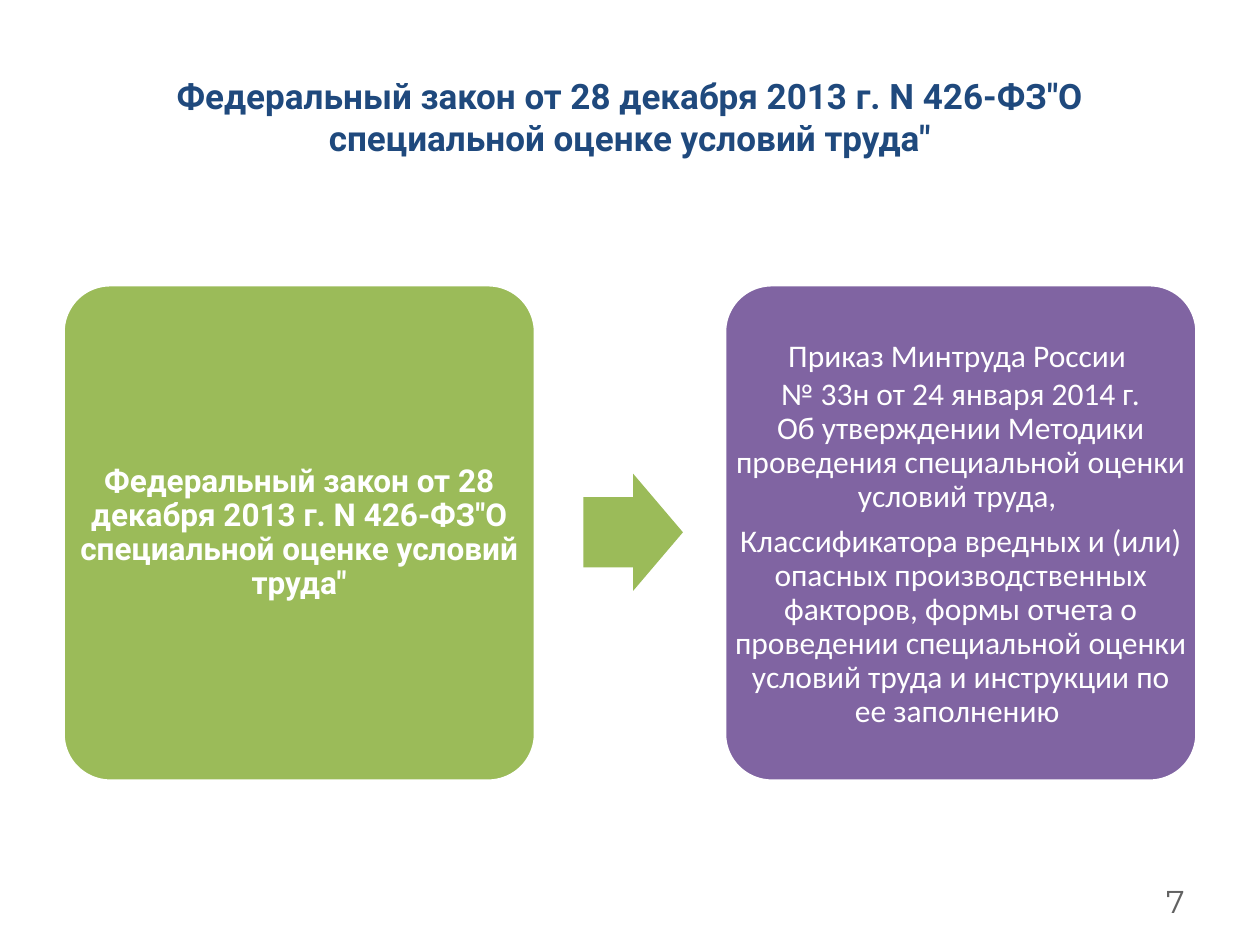
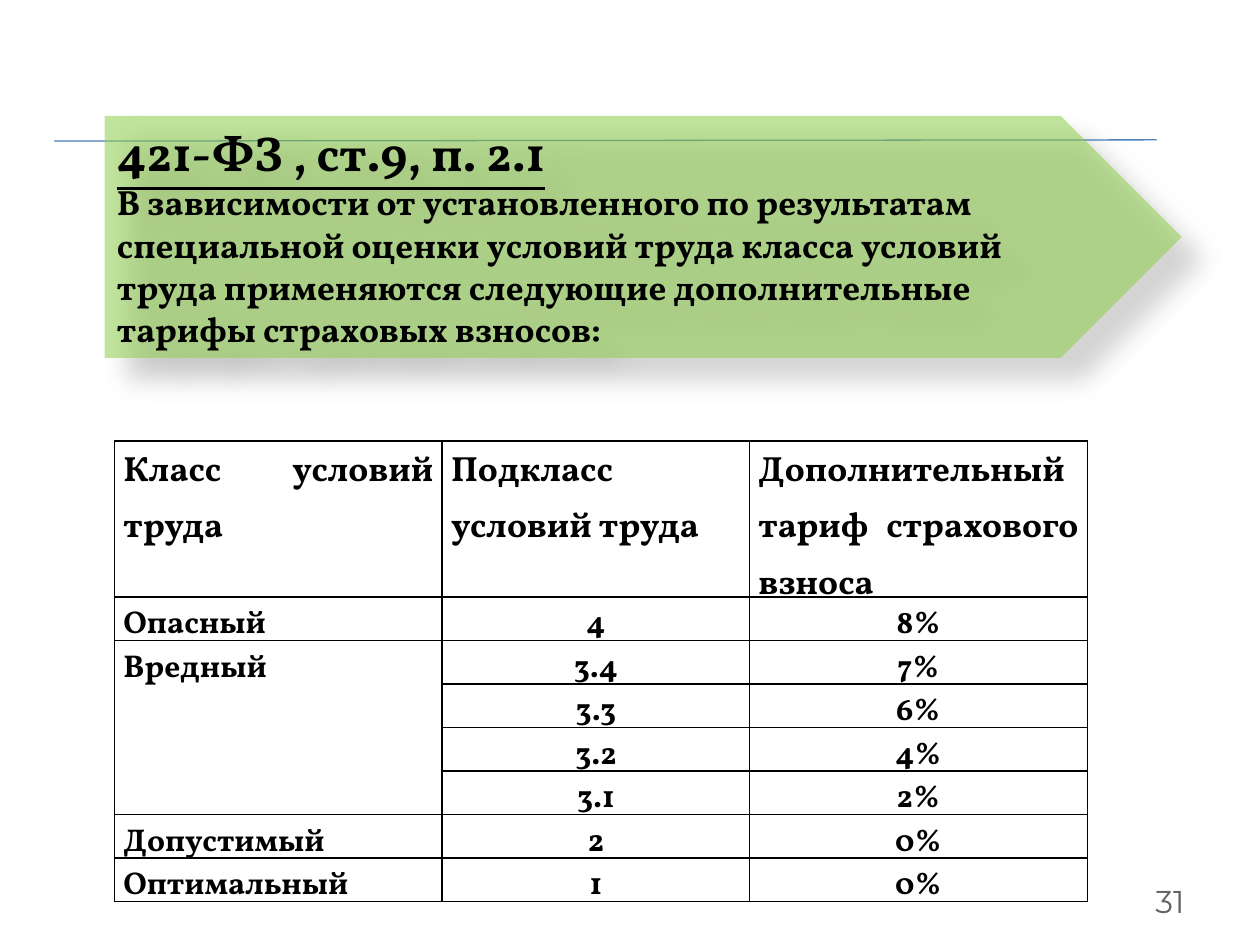
from dataclasses import dataclass

import pptx
import pptx.dml.color
import pptx.enum.shapes
import pptx.enum.text
import pptx.oxml
import pptx.oxml.ns
import pptx.util

Pt = pptx.util.Pt
Align = pptx.enum.text.PP_ALIGN
Anchor = pptx.enum.text.MSO_ANCHOR
Preset = pptx.enum.shapes.MSO_SHAPE

SLIDE_WIDTH, SLIDE_HEIGHT = pptx.util.Inches(10), pptx.util.Inches(7.5)
COLUMNS, ROWS = 40, 30

NAVY, GREEN, PURPLE, LIME = "1F497D", "9BBB59", "8064A2", "92D050"
WHITE, BLACK, GREY, BLUE = "FFFFFF", "000000", "626262", "4B7EBC"
HEADING_FONT, BODY_FONT, NUMBER_FONT, LAW_FONT = "Roboto", "Calibri", "Montserrat", "Vollkorn"

LAW_NAME = 'Федеральный закон от 28 декабря 2013 г. N 426-ФЗ"О специальной оценке условий труда"'


@dataclass(frozen=True)
class Area:
    """A place on the slide, in grid columns and rows."""
    column: float
    row: float
    columns: float
    rows: float

    def box(self) -> tuple:
        return across(self.column), down(self.row), across(self.columns), down(self.rows)


@dataclass(frozen=True)
class Style:
    font: str
    size: float
    color: str
    bold: bool = False
    align: Align = Align.LEFT
    underline: bool = False
    spacing: float = 1.0
    after: float = 0


@dataclass(frozen=True)
class Line:
    text: str
    style: Style


@dataclass(frozen=True)
class Card:
    column: float
    fill: str
    lines: list


def across(columns: float) -> int:
    return round(SLIDE_WIDTH * columns / COLUMNS)


def down(rows: float) -> int:
    return round(SLIDE_HEIGHT * rows / ROWS)


def rgb(color: str):
    return pptx.dml.color.RGBColor.from_string(color)


def element(xml: str):
    """Parse a fragment whose root is in the drawing namespace."""
    name, rest = xml[1:].split(maxsplit=1) if " " in xml.split(">")[0] else (xml[1:].rstrip("/>"), "/>")
    return pptx.oxml.parse_xml(f"<{name} {pptx.oxml.ns.nsdecls('a')} {rest}")


def write(frame, lines: list[Line], anchor=Anchor.MIDDLE) -> None:
    frame.word_wrap = True
    frame.vertical_anchor = anchor
    for index, line in enumerate(lines):
        paragraph = frame.paragraphs[0] if index == 0 else frame.add_paragraph()
        style = line.style
        paragraph.text = line.text
        paragraph.alignment = style.align
        paragraph.line_spacing = style.spacing
        paragraph.space_after = Pt(style.after)
        font = paragraph.font
        font.name, font.size, font.bold = style.font, Pt(style.size), style.bold
        font.underline = style.underline
        font.color.rgb = rgb(style.color)


def add_text(slide, area: Area, lines: list[Line], margin: float | None = None) -> None:
    frame = slide.shapes.add_textbox(*area.box()).text_frame
    if margin is not None:
        frame.margin_left = frame.margin_right = across(margin)
        frame.margin_top = frame.margin_bottom = down(margin)
    write(frame, lines)


def add_block(slide, preset, area: Area, fill: str, adjustments=(), outline: str | None = None):
    block = slide.shapes.add_shape(preset, *area.box())
    block.shadow.inherit = False
    block.fill.solid()
    block.fill.fore_color.rgb = rgb(fill)
    for index, value in enumerate(adjustments):
        block.adjustments[index] = value
    if outline:
        block.line.color.rgb = rgb(outline)
        block.line.width = Pt(2)
    else:
        block.line.fill.background()
    return block


def add_page_number(slide, number: int) -> None:
    style = Style(NUMBER_FONT, 18, GREY, align=Align.RIGHT)
    add_text(slide, Area(28.68, 27.8, 9.32, 1.6), [Line(str(number), style)])


def add_card(slide, card: Card) -> None:
    area = Area(card.column, 9.04, 15, 15.76)
    add_block(slide, Preset.ROUNDED_RECTANGLE, area, card.fill, [0.1], WHITE)
    add_text(slide, area, card.lines, margin=0.28)


def build_law_slide(slide) -> None:
    title = Style(HEADING_FONT, 20, NAVY, True, Align.CENTER)
    law = Style(HEADING_FONT, 18, WHITE, True, Align.CENTER, spacing=0.9, after=6.3)
    order = Style(BODY_FONT, 18, WHITE, align=Align.CENTER)
    subject = Style(BODY_FONT, 18, WHITE, align=Align.CENTER, spacing=0.9, after=6.3)

    add_text(slide, Area(2, 1.2, 36, 5), [Line(LAW_NAME, title)])
    add_card(slide, Card(2, GREEN, [Line(LAW_NAME, law)]))
    add_block(slide, Preset.RIGHT_ARROW, Area(18.52, 15.04, 3.16, 3.72), GREEN, [0.6, 0.5])
    add_card(slide, Card(23, PURPLE, [
        Line("Приказ Минтруда России ", order),
        Line("№ 33н от 24 января 2014 г.", order),
        Line("Об утверждении Методики проведения специальной оценки условий труда, ", subject),
        Line("Классификатора вредных и (или) опасных производственных факторов, формы отчета о "
             "проведении специальной оценки условий труда и инструкции по ее заполнению ", subject),
    ]))
    add_page_number(slide, 7)


def add_rule(slide) -> None:
    rule = slide.shapes.add_connector(pptx.enum.shapes.MSO_CONNECTOR.STRAIGHT,
                                      across(1.72), down(4.48), across(36.72), down(4.44))
    rule.line.color.rgb = rgb(BLUE)
    rule.line.width = Pt(0.75)
    rule._element.spPr.append(element("<a:effectLst/>"))


def add_article_plate(slide) -> None:
    plate = add_block(slide, Preset.PENTAGON, Area(3.32, 3.68, 34.2, 7.68), LIME)
    properties = plate._element.spPr
    properties.find(".//" + pptx.oxml.ns.qn("a:srgbClr")).append(element('<a:alpha val="56000"/>'))
    properties.find(pptx.oxml.ns.qn("a:effectLst")).append(element(
        f'<a:outerShdw blurRad="{Pt(15)}" dist="{Pt(18)}" dir="2700000" algn="tl" rotWithShape="0">'
        f'<a:srgbClr val="{BLACK}"><a:alpha val="30000"/></a:srgbClr></a:outerShdw>'))
    write(plate.text_frame, [
        Line("421-ФЗ , ст.9, п. 2.1", Style(LAW_FONT, 28, BLACK, True, underline=True)),
        Line("В зависимости от установленного по результатам специальной оценки условий труда класса "
             "условий труда применяются следующие дополнительные тарифы страховых взносов:",
             Style(LAW_FONT, 20, BLACK, True)),
    ], Anchor.TOP)


def add_borders(cell) -> None:
    properties = cell._tc.get_or_add_tcPr()
    for index, side in enumerate("LRTB"):
        properties.insert(index, element(
            f'<a:ln{side} w="{Pt(1)}"><a:solidFill><a:srgbClr val="{BLACK}"/></a:solidFill></a:ln{side}>'))


def add_tariff_table(slide) -> None:
    tariffs = [
        ("Класс условий труда", "Подкласс условий труда", "Дополнительный тариф страхового взноса"),
        ("Опасный", "4", "8%"),
        ("Вредный", "3.4", "7%"),
        ("", "3.3", "6%"),
        ("", "3.2", "4%"),
        ("", "3.1", "2%"),
        ("Допустимый", "2", "0%"),
        ("Оптимальный", "1", "0%"),
    ]
    widths = (10.4, 9.76, 10.72)
    heights = [4.96] + [1.36] * (len(tariffs) - 1)
    area = Area(3.64, 14, sum(widths), sum(heights))
    table = slide.shapes.add_table(len(tariffs), len(widths), *area.box()).table
    table.first_row = table.horz_banding = False
    for column, width in zip(table.columns, widths):
        column.width = across(width)
    for row, height in zip(table.rows, heights):
        row.height = down(height)

    for row, values in enumerate(tariffs):
        for column, value in enumerate(values):
            cell = table.cell(row, column)
            cell.margin_left = cell.margin_right = across(0.28)
            cell.margin_top = cell.margin_bottom = 0
            cell.fill.background()
            add_borders(cell)
            if value:
                align = Align.CENTER if row and column else Align.JUSTIFY
                style = Style(LAW_FONT, 18 if row else 20, BLACK, True, align, spacing=1.15)
                write(cell.text_frame, [Line(value, style)], Anchor.TOP)
    table.cell(2, 0).merge(table.cell(5, 0))


def build_tariff_slide(slide) -> None:
    add_rule(slide)
    add_article_plate(slide)
    add_tariff_table(slide)
    add_page_number(slide, 31)


def main() -> None:
    deck = pptx.Presentation()
    deck.slide_width, deck.slide_height = SLIDE_WIDTH, SLIDE_HEIGHT
    for build in (build_law_slide, build_tariff_slide):
        build(deck.slides.add_slide(deck.slide_layouts[6]))
    deck.save("out.pptx")


if __name__ == "__main__":
    main()
